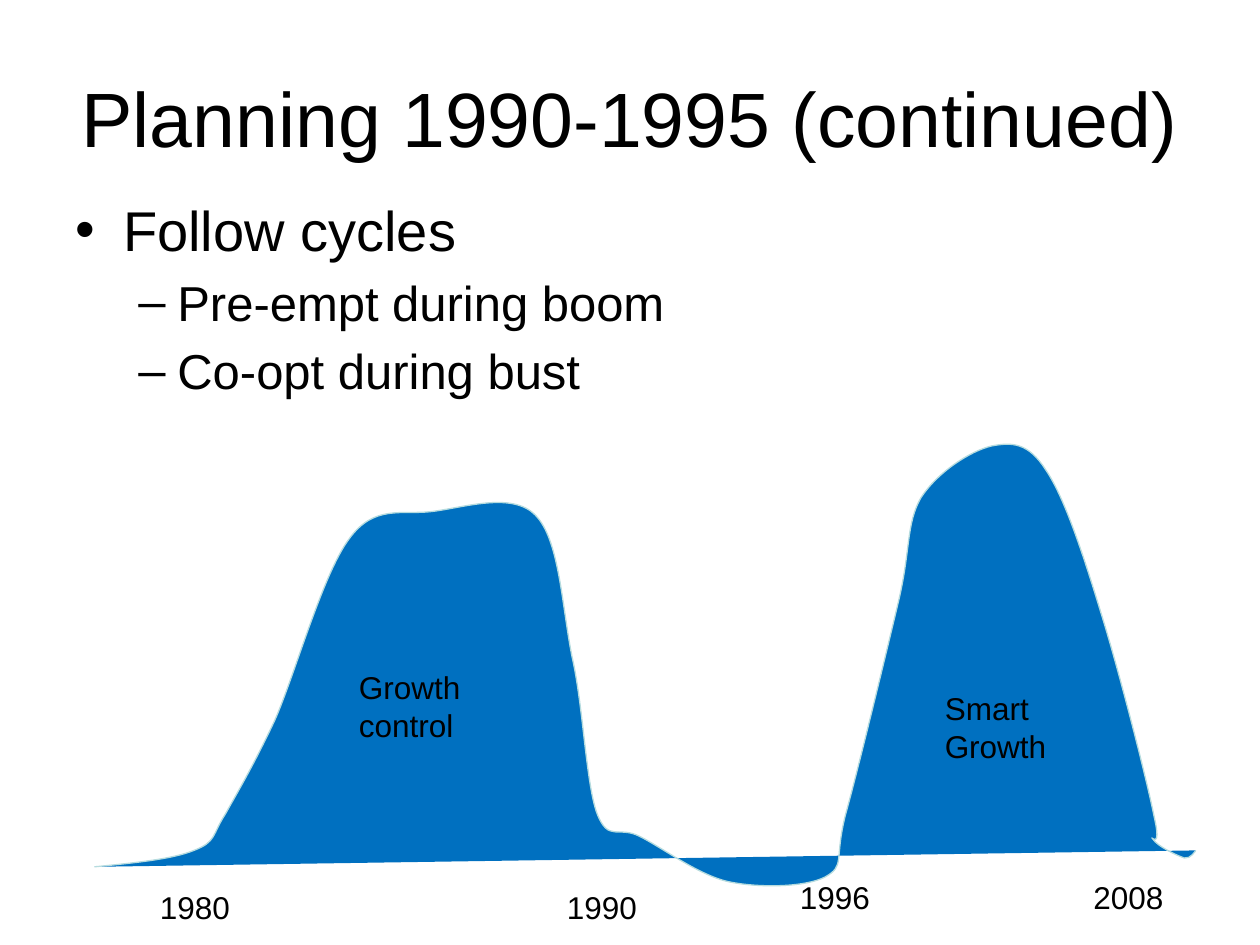
"""Builds a slide on planning through boom and bust cycles, with a growth curve."""
from dataclasses import dataclass

from lxml.etree import SubElement
from pptx import Presentation
from pptx.dml.color import RGBColor
from pptx.enum.text import MSO_ANCHOR, MSO_AUTO_SIZE, PP_ALIGN
from pptx.oxml.ns import qn
from pptx.util import Inches, Pt


@dataclass(frozen=True)
class Theme:
    font: str = "Arial"
    ink: RGBColor = RGBColor(0x00, 0x00, 0x00)
    paper: RGBColor = RGBColor(0xFF, 0xFF, 0xFF)
    wave: RGBColor = RGBColor(0x00, 0x70, 0xC0)
    edge: RGBColor = RGBColor(0xB6, 0xDC, 0xDF)
    title: int = 44
    point: int = 32
    subpoint: int = 28
    label: int = 18


CYCLE_START = (0.75, 6.88)
CYCLE_CURVES = [
    ((1.06, 6.85), (1.37, 6.82), (1.54, 6.75)),
    ((1.72, 6.68), (1.68, 6.63), (1.79, 6.46)),
    ((1.89, 6.28), (2.01, 6.08), (2.18, 5.72)),
    ((2.34, 5.36), (2.56, 4.56), (2.77, 4.28)),
    ((2.97, 4), (3.19, 4.09), (3.43, 4.06)),
    ((3.68, 4.03), (4.07, 3.9), (4.25, 4.09)),
    ((4.44, 4.28), (4.46, 4.81), (4.54, 5.21)),
    ((4.63, 5.6), (4.65, 6.22), (4.74, 6.46)),
    ((4.83, 6.69), (4.91, 6.55), (5.08, 6.64)),
    ((5.26, 6.73), (5.55, 6.95), (5.79, 7)),
    ((6.04, 7.05), (6.4, 7.04), (6.55, 6.96)),
    ((6.71, 6.87), (6.62, 6.83), (6.71, 6.47)),
    ((6.81, 6.11), (7.03, 5.2), (7.13, 4.78)),
    ((7.23, 4.36), (7.19, 4.16), (7.31, 3.95)),
    ((7.44, 3.75), (7.7, 3.58), (7.87, 3.54)),
    ((8.03, 3.51), (8.16, 3.51), (8.3, 3.73)),
    ((8.45, 3.95), (8.6, 4.41), (8.74, 4.87)),
    ((8.88, 5.32), (9.1, 6.18), (9.16, 6.48)),
    ((9.23, 6.78), (9.11, 6.61), (9.15, 6.66)),
    ((9.19, 6.72), (9.34, 6.79), (9.4, 6.81)),
    ((9.45, 6.82), (9.49, 6.75), (9.49, 6.75)),
]
LABELS = [
    ("1980", 1.17, 7, 0.76, 0.4),
    ("1990", 4.4, 7, 0.76, 0.4),
    ("1996", 6.25, 6.92, 0.76, 0.4),
    ("Growth\ncontrol", 2.75, 5.25, 1.02, 0.71),
    ("Smart\nGrowth", 7.4, 5.42, 1.02, 0.71),
    ("2008", 8.58, 6.92, 0.76, 0.4),
]


def add_text(paragraph, text, *, size, font, color, align=PP_ALIGN.LEFT):
    paragraph.alignment = align
    run = paragraph.add_run()
    run.text = text
    run.font.size = Pt(size)
    run.font.name = font
    run.font.color.rgb = color


class CycleSlide:
    def __init__(self, slide, theme):
        self.slide = slide
        self.theme = theme

    def frame(self, left, top, width, height):
        return self.slide.shapes.add_textbox(*map(Inches, (left, top, width, height)))

    def styled(self, paragraph, text, size, **style):
        add_text(paragraph, text, size=size, font=self.theme.font,
                 color=self.theme.ink, **style)

    def title(self, text, *place):
        heading = self.frame(*place).text_frame
        heading.word_wrap = True
        heading.vertical_anchor = MSO_ANCHOR.MIDDLE
        self.styled(heading.paragraphs[0], text, self.theme.title, align=PP_ALIGN.CENTER)

    def curve(self, start, curves):
        builder = self.slide.shapes.build_freeform(*map(Inches, start))
        points = [tuple(map(Inches, point)) for curve in curves for point in curve]
        builder.add_line_segments(points, close=False)
        wave = builder.convert_to_shape()
        wave.shadow.inherit = False
        wave.fill.solid()
        wave.fill.fore_color.rgb = self.theme.wave
        wave.line.color.rgb = self.theme.edge
        wave.line.width = Pt(0.75)
        outline = next(wave.element.iter(qn("a:path")))
        segments = outline.findall(qn("a:lnTo"))
        for index in range(0, len(segments), 3):
            bend = SubElement(outline, qn("a:cubicBezTo"))
            for segment in segments[index:index + 3]:
                bend.append(segment[0])
                outline.remove(segment)

    def bullets(self, points, *place):
        body = self.frame(*place)
        body.fill.solid()
        body.fill.fore_color.rgb = self.theme.paper
        body.text_frame.word_wrap = True
        levels = [("•", self.theme.point, 0.38, -0.38),
                  ("–", self.theme.subpoint, 0.81, -0.31)]
        for index, (text, level) in enumerate(points):
            mark, size, margin, indent = levels[level]
            paragraph = (body.text_frame.add_paragraph() if index
                         else body.text_frame.paragraphs[0])
            paragraph.level = level
            paragraph.space_before = Pt(size * 0.2)
            self.styled(paragraph, text, size)
            properties = paragraph._p.get_or_add_pPr()
            properties.set("marL", str(Inches(margin)))
            properties.set("indent", str(Inches(indent)))
            SubElement(properties, qn("a:buFont")).set("typeface", self.theme.font)
            SubElement(properties, qn("a:buChar")).set("char", mark)

    def label(self, text, *place):
        caption = self.frame(*place).text_frame
        caption.word_wrap = False
        caption.auto_size = MSO_AUTO_SIZE.SHAPE_TO_FIT_TEXT
        for index, line in enumerate(text.split("\n")):
            paragraph = caption.add_paragraph() if index else caption.paragraphs[0]
            self.styled(paragraph, line, self.theme.label)


def main():
    deck = Presentation()
    deck.slide_width, deck.slide_height = Inches(10), Inches(7.5)
    page = CycleSlide(deck.slides.add_slide(deck.slide_layouts[6]), Theme())
    page.title("Planning 1990-1995 (continued)", 0.5, 0.3, 9, 1.25)
    page.curve(CYCLE_START, CYCLE_CURVES)
    page.bullets([("Follow cycles", 0), ("Pre-empt during boom", 1),
                  ("Co-opt during bust", 1)], 0.5, 1.5, 9, 1.83)
    for label in LABELS:
        page.label(*label)
    deck.save("out.pptx")


if __name__ == "__main__":
    main()
